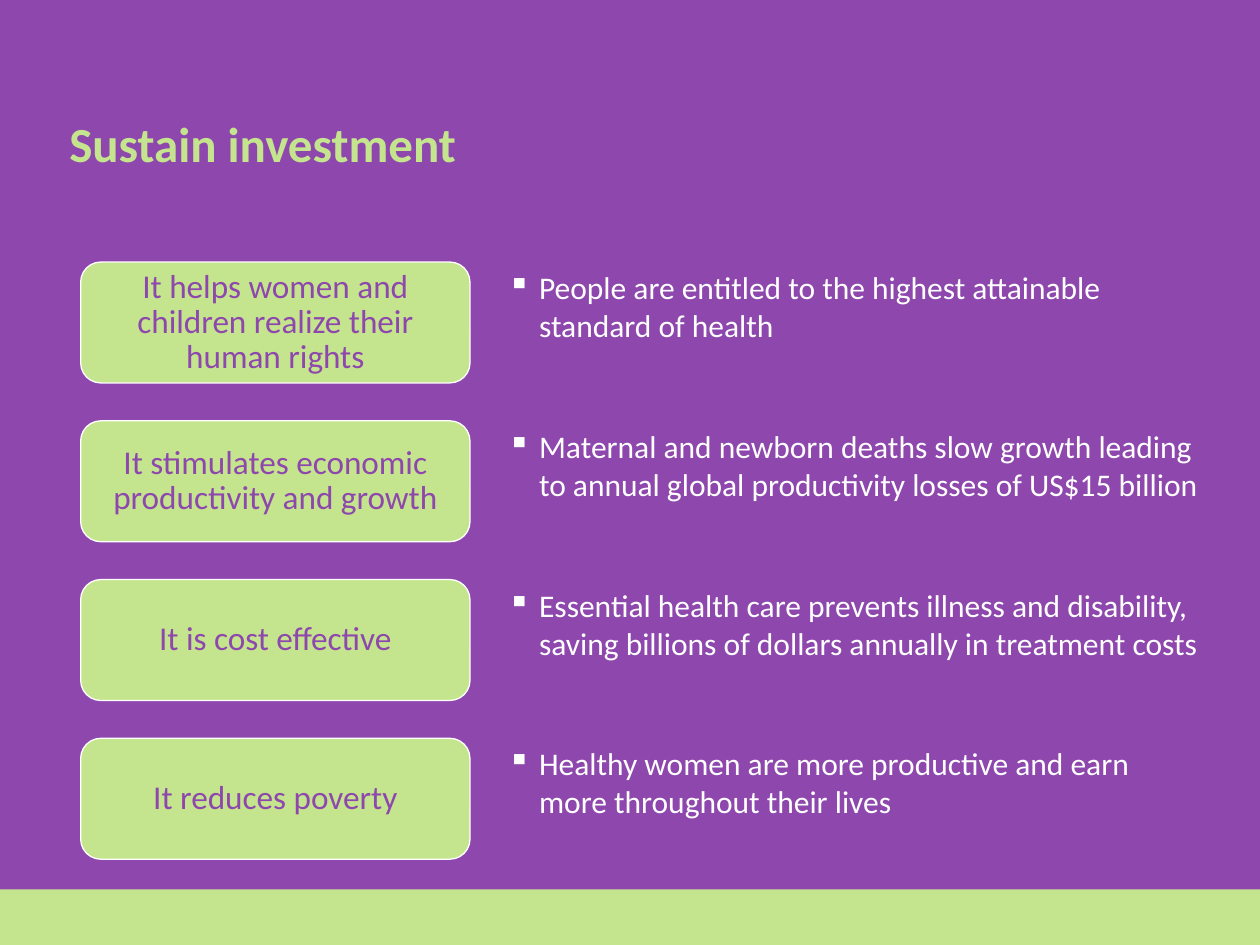
import pptx
import pptx.dml.color
import pptx.enum.shapes
import pptx.enum.text
import pptx.oxml
import pptx.oxml.ns
import pptx.util

PURPLE = pptx.dml.color.RGBColor(0x8E, 0x47, 0xAD)
GREEN = pptx.dml.color.RGBColor(0xC4, 0xE5, 0x8E)
WHITE = pptx.dml.color.RGBColor(0xFF, 0xFF, 0xFF)

SHAPES = pptx.enum.shapes.MSO_SHAPE
ALIGN = pptx.enum.text.PP_ALIGN
ANCHOR = pptx.enum.text.MSO_ANCHOR

REASONS = [
    ("It helps women and children realize their human rights",
     "People are entitled to the highest attainable standard of health"),
    ("It stimulates economic productivity and growth",
     "Maternal and newborn deaths slow growth leading to annual global "
     "productivity losses of US$15 billion"),
    ("It is cost effective",
     "Essential health care prevents illness and disability, saving billions "
     "of dollars annually in treatment costs"),
    ("It reduces poverty",
     "Healthy women are more productive and earn more throughout their lives"),
]


class SlideBuilder:
    font_name = "Calibri"
    columns = {"reason": (0.64, 3.09), "evidence": (3.93, 5.72)}
    first_row, row_pitch, row_height = 2.08, 1.26, 0.96

    def __init__(self, deck):
        self.slide = deck.slides.add_slide(deck.slide_layouts[5])
        self.slide.background.fill.solid()
        self.slide.background.fill.fore_color.rgb = PURPLE

    def cell(self, column, row):
        left, width = self.columns[column]
        top = self.first_row + row * self.row_pitch
        return [pptx.util.Inches(length) for length in (left, top, width, self.row_height)]

    def set_text(self, shape, text, size, color, align, anchor, bold=False, bullet=None):
        frame = shape.text_frame
        frame.word_wrap = True
        frame.auto_size = pptx.enum.text.MSO_AUTO_SIZE.NONE
        frame.vertical_anchor = anchor
        frame.text = text
        para = frame.paragraphs[0]
        para.alignment = align
        if bullet:
            self.add_bullet(para, bullet, color, 0.25)
        para.font.name = self.font_name
        para.font.size = pptx.util.Pt(size)
        para.font.bold = bold
        para.font.color.rgb = color
        return para

    def add_bullet(self, para, symbol, color, indent):
        properties = para._p.get_or_add_pPr()
        properties.set("marL", str(pptx.util.Inches(indent)))
        properties.set("indent", str(-pptx.util.Inches(indent)))
        namespace = pptx.oxml.ns.nsdecls("a")
        for markup in (
            f'<a:buClr {namespace}><a:srgbClr val="{color}"/></a:buClr>',
            f'<a:buChar {namespace} char="{symbol}"/>',
        ):
            properties.append(pptx.oxml.parse_xml(markup))

    def title(self, text, left, top, width, height):
        box = self.slide.shapes.title
        box.left, box.top = pptx.util.Inches(left), pptx.util.Inches(top)
        box.width, box.height = pptx.util.Inches(width), pptx.util.Inches(height)
        self.set_text(box, text, 28, GREEN, ALIGN.LEFT, ANCHOR.TOP, bold=True)

    def panel(self, kind, bounds):
        shape = self.slide.shapes.add_shape(kind, *bounds)
        shape.shadow.inherit = False
        shape.fill.solid()
        shape.fill.fore_color.rgb = GREEN
        shape.line.fill.background()
        return shape

    def band(self, top, width, height):
        bounds = [pptx.util.Inches(length) for length in (0, top, width, height)]
        self.panel(SHAPES.RECTANGLE, bounds)

    def reason(self, text, row):
        shape = self.panel(SHAPES.ROUNDED_RECTANGLE, self.cell("reason", row))
        shape.line.color.rgb = WHITE
        shape.line.width = pptx.util.Pt(0.75)
        para = self.set_text(shape, text, 19, PURPLE, ALIGN.CENTER, ANCHOR.MIDDLE)
        para.line_spacing = pptx.util.Pt(20)

    def evidence(self, text, row):
        box = self.slide.shapes.add_textbox(*self.cell("evidence", row))
        self.set_text(box, text, 18, WHITE, ALIGN.LEFT, ANCHOR.TOP, bullet="▪")


def main():
    deck = pptx.Presentation()
    deck.slide_width = pptx.util.Inches(10)
    deck.slide_height = pptx.util.Inches(7.5)
    page = SlideBuilder(deck)
    page.band(7.06, 10, 0.44)
    page.title("Sustain investment", 0.45, 0.85, 7.15, 1.25)
    for row, (reason, evidence) in enumerate(REASONS):
        page.reason(reason, row)
        page.evidence(evidence, row)
    deck.save("out.pptx")


if __name__ == "__main__":
    main()
